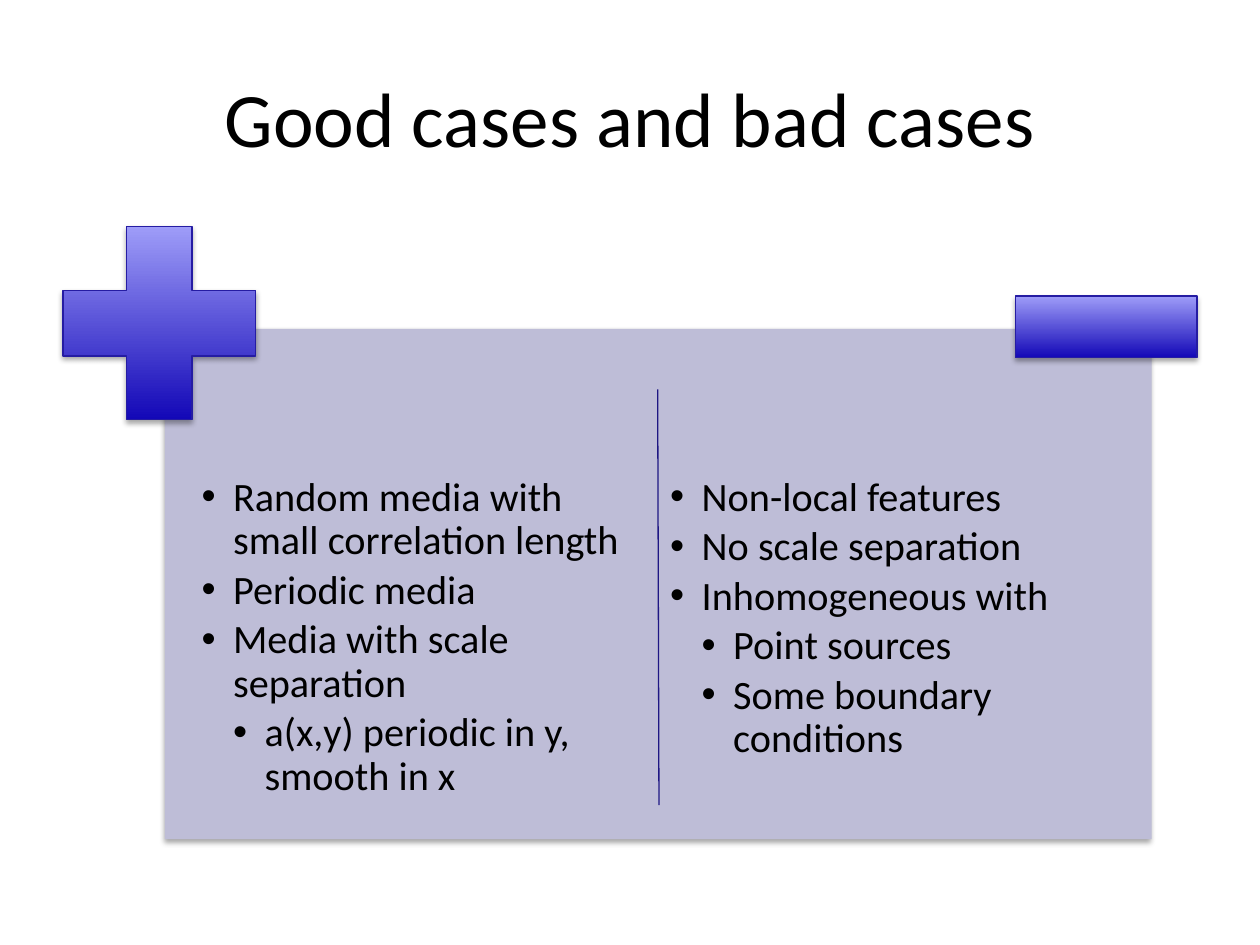
from dataclasses import dataclass

from lxml import etree
from pptx import Presentation
from pptx.dml.color import RGBColor
from pptx.enum.shapes import MSO_CONNECTOR, MSO_SHAPE
from pptx.enum.text import MSO_ANCHOR, PP_ALIGN
from pptx.oxml.ns import qn
from pptx.util import Inches, Pt

CENTER = PP_ALIGN.CENTER
MIDDLE, TOP = MSO_ANCHOR.MIDDLE, MSO_ANCHOR.TOP
RECT, PLUS = MSO_SHAPE.RECTANGLE, MSO_SHAPE.CROSS
STRAIGHT = MSO_CONNECTOR.STRAIGHT


@dataclass(frozen=True)
class Theme:
    font: str = "Calibri"
    title_size: Pt = Pt(44)
    body_size: Pt = Pt(23)
    text: RGBColor = RGBColor(0, 0, 0)
    panel: RGBColor = RGBColor(0xBE, 0xBD, 0xD7)
    dark: RGBColor = RGBColor(0x13, 0x08, 0xB7)
    light: RGBColor = RGBColor(0x9E, 0x9C, 0xF8)
    outline: RGBColor = RGBColor(0x25, 0x1C, 0xA3)
    divider: RGBColor = RGBColor(0x1E, 0x16, 0x83)


theme = Theme()


def add_soft_shape(kind, box):
    sp = slide.shapes.add_shape(kind, *map(Inches, box))
    sp.shadow.inherit = False
    effects = sp._element.spPr.find(qn("a:effectLst"))
    shadow = etree.SubElement(
        effects, qn("a:outerShdw"), blurRad=str(Pt(3.1)), dist=str(Pt(1.8)),
        dir="5400000", rotWithShape="0")
    color = etree.SubElement(shadow, qn("a:srgbClr"), val="000000")
    etree.SubElement(color, qn("a:alpha"), val="35000")
    return sp


def set_bullet(p, level):
    p.level = level
    pPr = p._p.get_or_add_pPr()
    pPr.set("marL", str(Inches(0.25 * level)))
    pPr.set("indent", str(Inches(-0.25)))
    etree.SubElement(pPr, qn("a:buFont"), typeface="Arial")
    etree.SubElement(pPr, qn("a:buChar"), char="•")


prs = Presentation()
prs.slide_width, prs.slide_height = Inches(10), Inches(7.5)
slide = prs.slides.add_slide(prs.slide_layouts[5])

title = slide.shapes.title
title.left, title.top = Inches(0.5), Inches(0.3)
title.width, title.height = Inches(9), Inches(1.25)
tf = title.text_frame
tf.text = "Good cases and bad cases"
tf.vertical_anchor = MIDDLE
p = tf.paragraphs[0]
p.alignment = CENTER
font = p.runs[0].font
font.name, font.size = theme.font, theme.title_size
font.color.rgb = theme.text

panel = add_soft_shape(RECT, (1.31, 2.61, 7.83, 4.05))
panel.fill.solid()
panel.fill.fore_color.rgb = theme.panel
panel.line.fill.background()

columns = [
    (1.54, [
        (1, "Random media with small correlation length"),
        (1, "Periodic media"),
        (1, "Media with scale separation"),
        (2, "a(x,y) periodic in y, smooth in x"),
    ]),
    (5.26, [
        (1, "Non-local features"),
        (1, "No scale separation"),
        (1, "Inhomogeneous with"),
        (2, "Point sources"),
        (2, "Some boundary conditions"),
    ]),
]
for left, cases in columns:
    tb = slide.shapes.add_textbox(Inches(left), Inches(3.72), Inches(3.64), Inches(2.82))
    tf = tb.text_frame
    tf.word_wrap = True
    tf.vertical_anchor = TOP
    tf.margin_left = tf.margin_right = tf.margin_top = tf.margin_bottom = Inches(0.06)
    for i, (level, text) in enumerate(cases):
        p = tf.add_paragraph() if i else tf.paragraphs[0]
        p.text = text
        set_bullet(p, level)
        p.line_spacing = 0.9
        p.space_after = Pt(3.5)
        font = p.runs[0].font
        font.name, font.size = theme.font, theme.body_size
        font.color.rgb = theme.text

plus = add_soft_shape(PLUS, (0.5, 1.8, 1.53, 1.53))
plus.adjustments[0] = 0.33
minus = add_soft_shape(RECT, (8.06, 2.35, 1.44, 0.49))
for sign in (plus, minus):
    sign.fill.gradient()
    sign.fill.gradient_angle = 90
    for stop, color in zip(sign.fill.gradient_stops, (theme.dark, theme.light)):
        stop.color.rgb = color
    sign.line.color.rgb = theme.outline
    sign.line.width = Pt(0.75)

divider = slide.shapes.add_connector(
    STRAIGHT, Inches(5.22), Inches(3.09), Inches(5.23), Inches(6.39))
divider.line.color.rgb = theme.divider
divider.line.width = Pt(0.75)
etree.SubElement(divider._element.spPr, qn("a:effectLst"))

prs.save("out.pptx")
